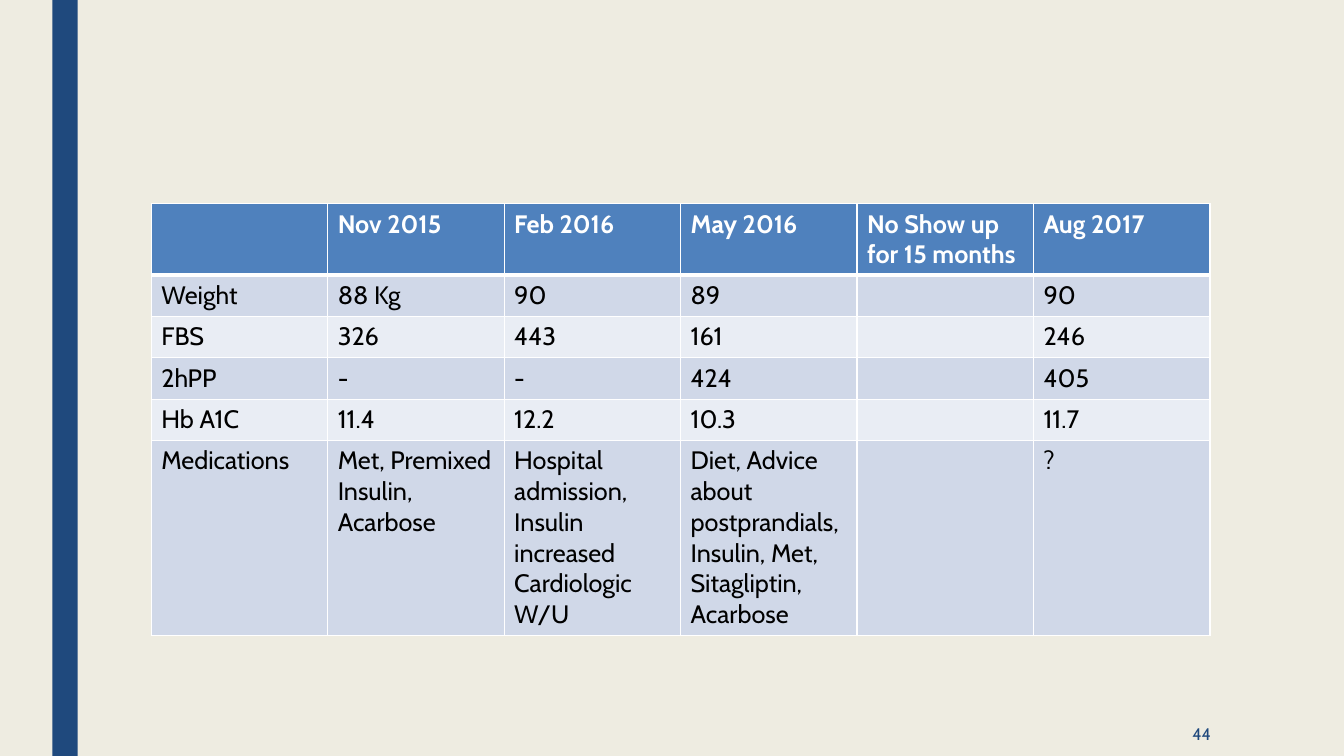
from dataclasses import dataclass

import pptx
import pptx.dml.color
import pptx.enum.shapes
import pptx.enum.text
import pptx.oxml
import pptx.oxml.ns
import pptx.presentation
import pptx.slide
import pptx.table
import pptx.text.text
import pptx.util

Inches = pptx.util.Inches
RGBColor = pptx.dml.color.RGBColor

FONT = "Cabin"
CREAM = RGBColor(0xEE, 0xEC, 0xE1)
NAVY = RGBColor(0x1F, 0x49, 0x7D)
BLUE = RGBColor(0x4F, 0x81, 0xBD)
DARK_BAND = RGBColor(0xD0, 0xD8, 0xE8)
LIGHT_BAND = RGBColor(0xE9, 0xED, 0xF4)
WHITE = RGBColor(0xFF, 0xFF, 0xFF)
BLACK = RGBColor(0x00, 0x00, 0x00)

COLUMN_WIDTH = Inches(1.75)
ROW_HEIGHT = Inches(0.41)


@dataclass(frozen=True)
class Measurement:
    """One table row: its label and a value for each visit."""

    label: str
    values: tuple[str, ...]


HEADER = Measurement(
    "", ("Nov 2015", "Feb 2016", "May 2016", "No Show up for 15 months", "Aug 2017")
)
MEASUREMENTS = (
    Measurement("Weight", ("88 Kg", "90", "89", "", "90")),
    Measurement("FBS", ("326", "443", "161", "", "246")),
    Measurement("2hPP", ("-", "-", "424", "", "405")),
    Measurement("Hb A1C", ("11.4", "12.2", "10.3", "", "11.7")),
    Measurement(
        "Medications",
        (
            "Met, Premixed Insulin, Acarbose",
            "Hospital admission, Insulin increased\nCardiologic W/U",
            "Diet, Advice about postprandials, Insulin, Met, Sitagliptin, Acarbose",
            "",
            "?",
        ),
    ),
)


def write_text(
    text_frame: pptx.text.text.TextFrame,
    text: str,
    *,
    size: float = 18,
    color: RGBColor = BLACK,
    bold: bool = False,
    alignment: pptx.enum.text.PP_ALIGN = pptx.enum.text.PP_ALIGN.LEFT,
) -> None:
    text_frame.text = text
    text_frame.word_wrap = True
    for paragraph in text_frame.paragraphs:
        paragraph.alignment = alignment
        for run in paragraph.runs:
            run.font.name = FONT
            run.font.size = pptx.util.Pt(size)
            run.font.bold = bold
            run.font.color.rgb = color


def set_borders(cell: pptx.table._Cell, bottom_width: float) -> None:
    """Draw white borders, 1 point wide except at the bottom."""
    properties = cell._tc.get_or_add_tcPr()
    widths = {"lnL": 1, "lnR": 1, "lnT": 1, "lnB": bottom_width}
    for position, (side, width) in enumerate(widths.items()):
        border = pptx.oxml.parse_xml(
            f'<a:{side} {pptx.oxml.ns.nsdecls("a")} w="{pptx.util.Pt(width)}">'
            f'<a:solidFill><a:srgbClr val="{WHITE}"/></a:solidFill></a:{side}>'
        )
        properties.insert(position, border)


def fill_row(
    table: pptx.table.Table,
    row_index: int,
    measurement: Measurement,
    *,
    fill: RGBColor,
    color: RGBColor = BLACK,
    bold: bool = False,
    bottom_width: float = 1,
) -> None:
    texts = (measurement.label, *measurement.values)
    for column_index, text in enumerate(texts):
        cell = table.cell(row_index, column_index)
        cell.fill.solid()
        cell.fill.fore_color.rgb = fill
        write_text(cell.text_frame, text, color=color, bold=bold)
        set_borders(cell, bottom_width)


def add_visit_table(slide: pptx.slide.Slide) -> None:
    row_count = len(MEASUREMENTS) + 1
    column_count = len(HEADER.values) + 1
    frame = slide.shapes.add_table(
        row_count,
        column_count,
        Inches(1.5),
        Inches(2.02),
        COLUMN_WIDTH * column_count,
        ROW_HEIGHT * row_count,
    )
    fill_row(
        frame.table, 0, HEADER, fill=BLUE, color=WHITE, bold=True, bottom_width=3
    )
    for row_index, measurement in enumerate(MEASUREMENTS, start=1):
        band = DARK_BAND if row_index % 2 else LIGHT_BAND
        fill_row(frame.table, row_index, measurement, fill=band)
    # Rows grow to fit their wrapped text.
    frame.height = Inches(4.22)


def add_side_bar(slide: pptx.slide.Slide, height: int) -> None:
    bar = slide.shapes.add_shape(
        pptx.enum.shapes.MSO_SHAPE.RECTANGLE, Inches(0.52), 0, Inches(0.25), height
    )
    bar.shadow.inherit = False
    bar.fill.solid()
    bar.fill.fore_color.rgb = NAVY
    bar.line.fill.background()


def add_slide_number(slide: pptx.slide.Slide) -> None:
    number_box = slide.shapes.add_textbox(
        Inches(10.36), Inches(7.06), COLUMN_WIDTH, Inches(0.44)
    )
    number_box.text_frame.vertical_anchor = pptx.enum.text.MSO_ANCHOR.MIDDLE
    write_text(
        number_box.text_frame,
        "44",
        size=12,
        color=NAVY,
        alignment=pptx.enum.text.PP_ALIGN.RIGHT,
    )


def main() -> None:
    presentation = pptx.Presentation()
    presentation.slide_width = Inches(13.33)
    presentation.slide_height = Inches(7.5)
    slide = presentation.slides.add_slide(presentation.slide_layouts[6])
    slide.background.fill.solid()
    slide.background.fill.fore_color.rgb = CREAM
    add_side_bar(slide, presentation.slide_height)
    add_visit_table(slide)
    add_slide_number(slide)
    presentation.save("out.pptx")


if __name__ == "__main__":
    main()
